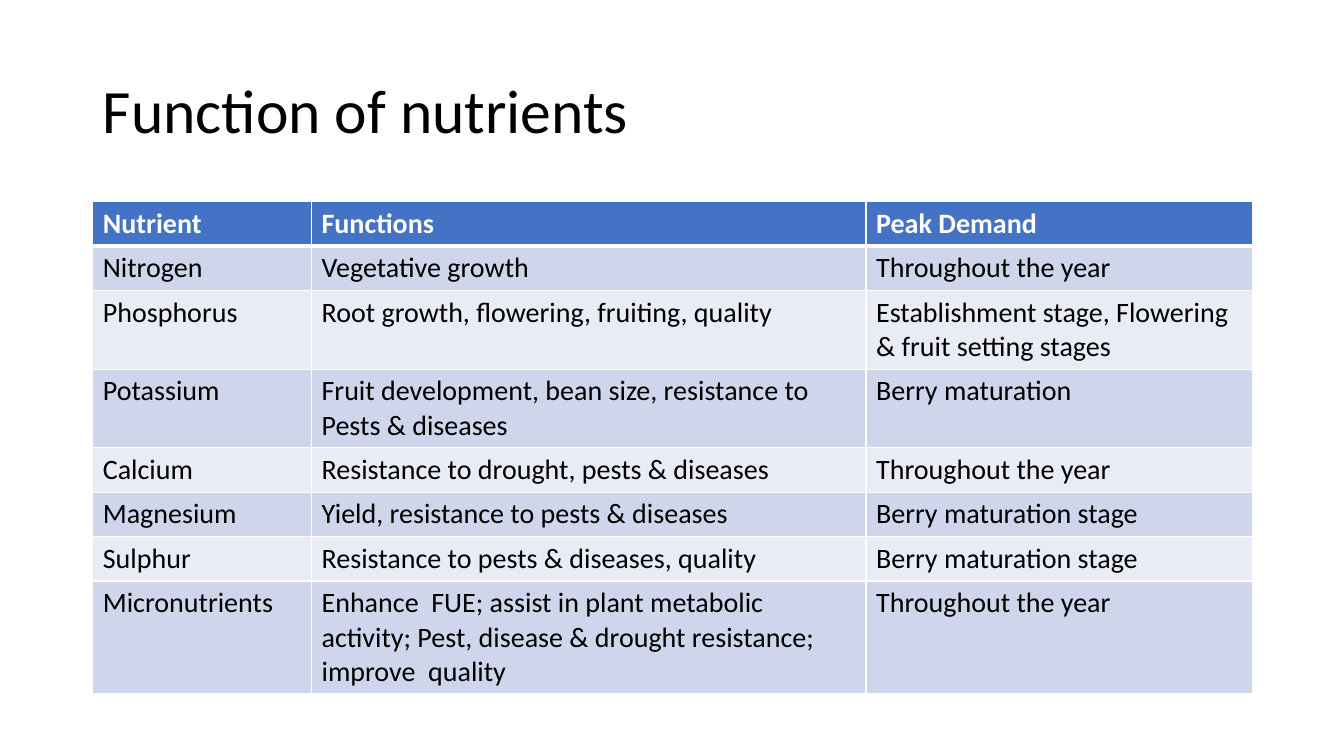
from dataclasses import dataclass

import lxml.etree
import pptx
import pptx.dml.color
import pptx.enum.text
import pptx.oxml.ns
import pptx.slide
import pptx.table
import pptx.text.text
import pptx.util
from pptx.util import Inches

FONT = "Calibri"
BLACK = pptx.dml.color.RGBColor(0x00, 0x00, 0x00)
WHITE = pptx.dml.color.RGBColor(0xFF, 0xFF, 0xFF)
HEADER_BLUE = pptx.dml.color.RGBColor(0x44, 0x72, 0xC4)
BANDS = (
    pptx.dml.color.RGBColor(0xCF, 0xD5, 0xEA),
    pptx.dml.color.RGBColor(0xE9, 0xEB, 0xF5),
)

LEFT, CONTENT_WIDTH = Inches(0.92), Inches(11.5)
COLUMN_WIDTHS = (Inches(2.17), Inches(5.5), Inches(3.83))
ROW_HEIGHT = Inches(0.41)
THIN, THICK = 1, 3


@dataclass(frozen=True)
class Nutrient:
    name: str
    functions: str
    peak_demand: str

    def texts(self) -> tuple[str, str, str]:
        return self.name, self.functions, self.peak_demand


HEADINGS = Nutrient("Nutrient", "Functions", "Peak Demand")
NUTRIENTS = (
    Nutrient("Nitrogen", "Vegetative growth", "Throughout the year"),
    Nutrient("Phosphorus", "Root growth, flowering, fruiting, quality",
             "Establishment stage, Flowering & fruit setting stages"),
    Nutrient("Potassium", "Fruit development, bean size, resistance to Pests & diseases",
             "Berry maturation"),
    Nutrient("Calcium", "Resistance to drought, pests & diseases", "Throughout the year"),
    Nutrient("Magnesium", "Yield, resistance to pests & diseases", "Berry maturation stage"),
    Nutrient("Sulphur", "Resistance to pests & diseases, quality", "Berry maturation stage"),
    Nutrient("Micronutrients",
             "Enhance  FUE; assist in plant metabolic  activity; "
             "Pest, disease & drought resistance; improve  quality",
             "Throughout the year"),
)


def set_font(paragraph: pptx.text.text._Paragraph, size: int,
             color: pptx.dml.color.RGBColor, bold: bool = False) -> None:
    font = paragraph.font
    font.name, font.size, font.bold = FONT, pptx.util.Pt(size), bold
    font.color.rgb = color


def set_borders(cell: pptx.table._Cell, top: int, bottom: int) -> None:
    """Draw white cell edges; widths are in points."""
    properties = cell._tc.get_or_add_tcPr()
    edges = {"a:lnL": THIN, "a:lnR": THIN, "a:lnT": top, "a:lnB": bottom}
    # Edges must come before the fill in the cell properties
    for position, (tag, width) in enumerate(edges.items()):
        edge = lxml.etree.Element(pptx.oxml.ns.qn(tag), w=str(pptx.util.Pt(width)))
        fill = lxml.etree.SubElement(edge, pptx.oxml.ns.qn("a:solidFill"))
        lxml.etree.SubElement(fill, pptx.oxml.ns.qn("a:srgbClr"), val=str(WHITE))
        properties.insert(position, edge)


def add_title(slide: pptx.slide.Slide, text: str) -> None:
    title = slide.shapes.title
    title.left, title.top = LEFT, Inches(0.4)
    title.width, title.height = CONTENT_WIDTH, Inches(1.45)
    frame = title.text_frame
    frame.text = text
    frame.word_wrap = True
    frame.auto_size = pptx.enum.text.MSO_AUTO_SIZE.NONE
    frame.vertical_anchor = pptx.enum.text.MSO_ANCHOR.MIDDLE
    paragraph = frame.paragraphs[0]
    paragraph.alignment = pptx.enum.text.PP_ALIGN.LEFT
    paragraph.line_spacing = 0.9
    set_font(paragraph, 44, BLACK)


def add_nutrient_table(slide: pptx.slide.Slide) -> None:
    rows = (HEADINGS, *NUTRIENTS)
    table = slide.shapes.add_table(
        len(rows), len(COLUMN_WIDTHS), LEFT, Inches(2),
        CONTENT_WIDTH, ROW_HEIGHT * len(rows)).table
    for column, width in zip(table.columns, COLUMN_WIDTHS):
        column.width = width

    for index, nutrient in enumerate(rows):
        table.rows[index].height = ROW_HEIGHT
        is_header = index == 0
        for cell, text in zip(table.rows[index].cells, nutrient.texts()):
            cell.text = text
            set_font(cell.text_frame.paragraphs[0], 20,
                     WHITE if is_header else BLACK, bold=is_header)
            cell.fill.solid()
            cell.fill.fore_color.rgb = HEADER_BLUE if is_header else BANDS[(index - 1) % 2]
            set_borders(cell, top=THICK if index == 1 else THIN,
                        bottom=THICK if is_header else THIN)


def main() -> None:
    presentation = pptx.Presentation()
    presentation.slide_width, presentation.slide_height = Inches(13.33), Inches(7.5)
    title_only = presentation.slide_layouts[5]
    slide = presentation.slides.add_slide(title_only)
    add_title(slide, "Function of nutrients")
    add_nutrient_table(slide)
    presentation.save("out.pptx")


if __name__ == "__main__":
    main()
